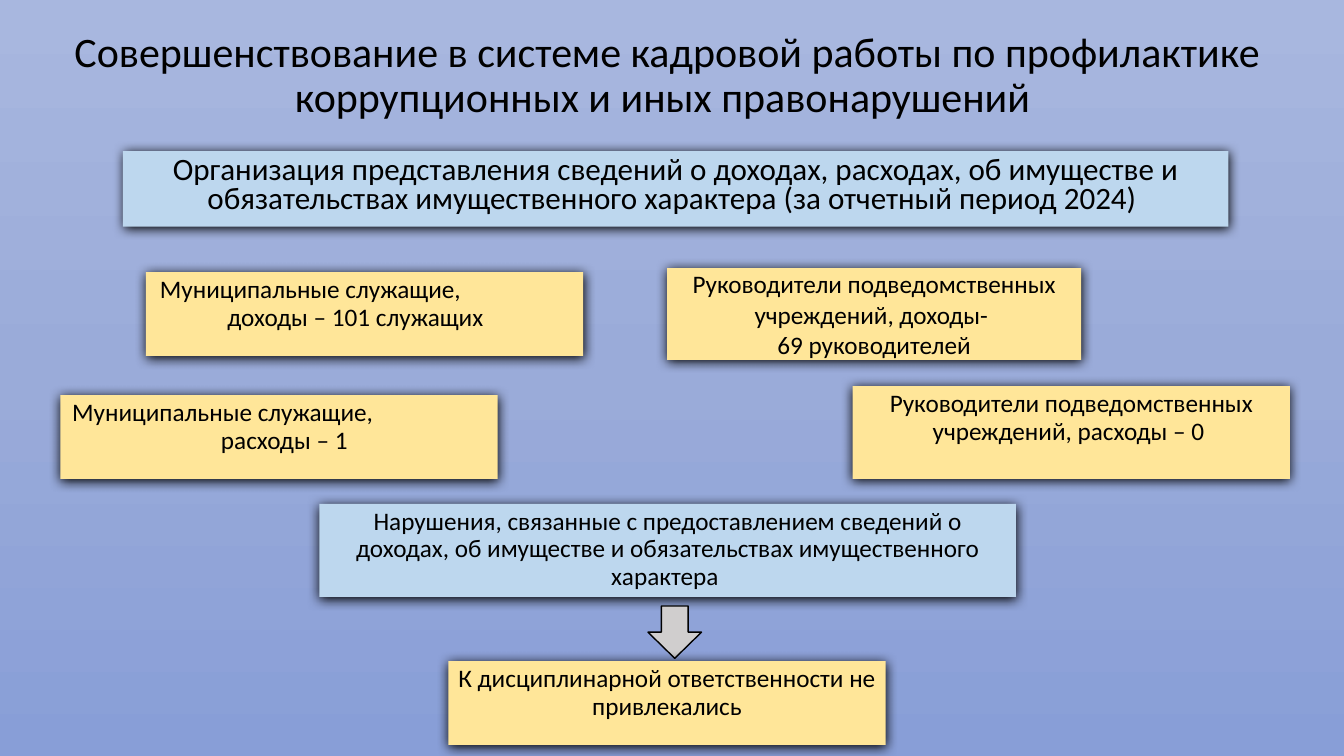
from lxml import etree
from pptx import Presentation
from pptx.dml.color import RGBColor
from pptx.enum import shapes, text
from pptx.oxml import parse_xml
from pptx.oxml.ns import nsdecls, qn
from pptx.util import Cm, Pt

BLACK = RGBColor(0x00, 0x00, 0x00)
YELLOW = RGBColor(0xFF, 0xE6, 0x99)
BLUE = RGBColor(0xBD, 0xD7, 0xEE)
GREY = RGBColor(0xD0, 0xCE, 0xCE)
BACKGROUND = [(0, RGBColor(0xA8, 0xB7, 0xDF)),
              (50, RGBColor(0x9A, 0xAB, 0xD9)),
              (100, RGBColor(0x88, 0x9E, 0xD7))]
FONT = "Calibri"
CARD_W, CARD_H = 11.02, 2.11


def paint_background(slide):
    fill = slide.background.fill
    fill.gradient()
    fill.gradient_angle = 270
    stops = next(slide.element.iter(qn("a:gsLst")))
    for stop in list(stops):
        stops.remove(stop)
    for percent, color in BACKGROUND:
        stop = etree.SubElement(stops, qn("a:gs"), pos=str(percent * 1000))
        etree.SubElement(stop, qn("a:srgbClr"), val=str(color))


def add_shadow(sp):
    sp.shadow.inherit = False
    effects = sp.element.spPr.find(qn("a:effectLst"))
    effects.append(parse_xml(
        f'<a:outerShdw {nsdecls("a")} blurRad="{Pt(8.5)}" dist="{Pt(1)}" '
        'dir="5400000" algn="ctr" rotWithShape="0">'
        f'<a:srgbClr val="{BLACK}"/></a:outerShdw>'))


def write(tf, lines, size, spacing, anchor, indents=None):
    """Centre the lines, or align them left at the given indents in cm."""
    tf.word_wrap = True
    tf.vertical_anchor = anchor
    for i, line in enumerate(lines):
        p = tf.paragraphs[0] if i == 0 else tf.add_paragraph()
        p.text = line
        p.alignment = text.PP_ALIGN.CENTER
        if indents:
            p.alignment = text.PP_ALIGN.LEFT
            p._p.get_or_add_pPr().set("marL", str(Cm(indents[i])))
        p.line_spacing = spacing
        p.font.name = FONT
        p.font.size = Pt(size)
        p.font.color.rgb = BLACK


def add_title(slide, box, title):
    sp = slide.shapes.add_textbox(*map(Cm, box))
    write(sp.text_frame, [title], 30, 0.9, text.MSO_ANCHOR.MIDDLE)


def add_card(slide, box, color, lines, size=18, spacing=0.9,
             anchor=text.MSO_ANCHOR.TOP, indents=None):
    sp = slide.shapes.add_shape(shapes.MSO_SHAPE.RECTANGLE, *map(Cm, box))
    sp.fill.solid()
    sp.fill.fore_color.rgb = color
    sp.line.fill.background()
    add_shadow(sp)
    write(sp.text_frame, lines, size, spacing, anchor, indents)


def add_arrow(slide, box):
    sp = slide.shapes.add_shape(shapes.MSO_SHAPE.DOWN_ARROW, *map(Cm, box))
    sp.shadow.inherit = False
    sp.fill.solid()
    sp.fill.fore_color.rgb = GREY
    sp.line.color.rgb = BLACK
    sp.line.width = Pt(1)


def main():
    prs = Presentation()
    prs.slide_width, prs.slide_height = Cm(33.87), Cm(19.05)
    slide = prs.slides.add_slide(prs.slide_layouts[6])
    paint_background(slide)

    # Title
    add_title(slide, (1.52, 0.61, 30.61, 2.64),
              "Совершенствование в системе кадровой работы по профилактике "
              "коррупционных и иных правонарушений ")

    # Income reports
    add_card(slide, (3.68, 6.86, CARD_W, CARD_H), YELLOW,
             ["Муниципальные служащие,", "доходы – 101 служащих"],
             indents=(0.1, 1.8))
    add_card(slide, (16.81, 6.76, 10.44, 2.31), YELLOW,
             ["Руководители подведомственных учреждений, доходы- ",
              "69 руководителей"],
             spacing=1.0, anchor=text.MSO_ANCHOR.MIDDLE)

    # Expense reports
    add_card(slide, (1.52, 9.96, CARD_W, CARD_H), YELLOW,
             ["Муниципальные служащие,", "расходы – 1"],
             indents=(0.05, 3.8))
    add_card(slide, (21.49, 9.73, CARD_W, 2.34), YELLOW,
             ["Руководители подведомственных учреждений, расходы – 0 "])

    # Section headings
    add_card(slide, (3.1, 3.81, 27.86, 1.9), BLUE,
             ["Организация представления сведений о доходах, расходах, "
              "об имуществе и обязательствах имущественного характера "
              "(за отчетный период 2024) "], size=22.2, spacing=0.8)
    add_card(slide, (8.05, 12.7, 17.55, 2.34), BLUE,
             ["Нарушения, связанные с предоставлением сведений о доходах, "
              "об имуществе и обязательствах имущественного характера "])

    # Outcome
    add_arrow(slide, (16.33, 15.27, 1.35, 1.32))
    add_card(slide, (11.3, 16.66, CARD_W, CARD_H), YELLOW,
             ["К дисциплинарной ответственности не привлекались"])

    prs.save("out.pptx")


if __name__ == "__main__":
    main()
